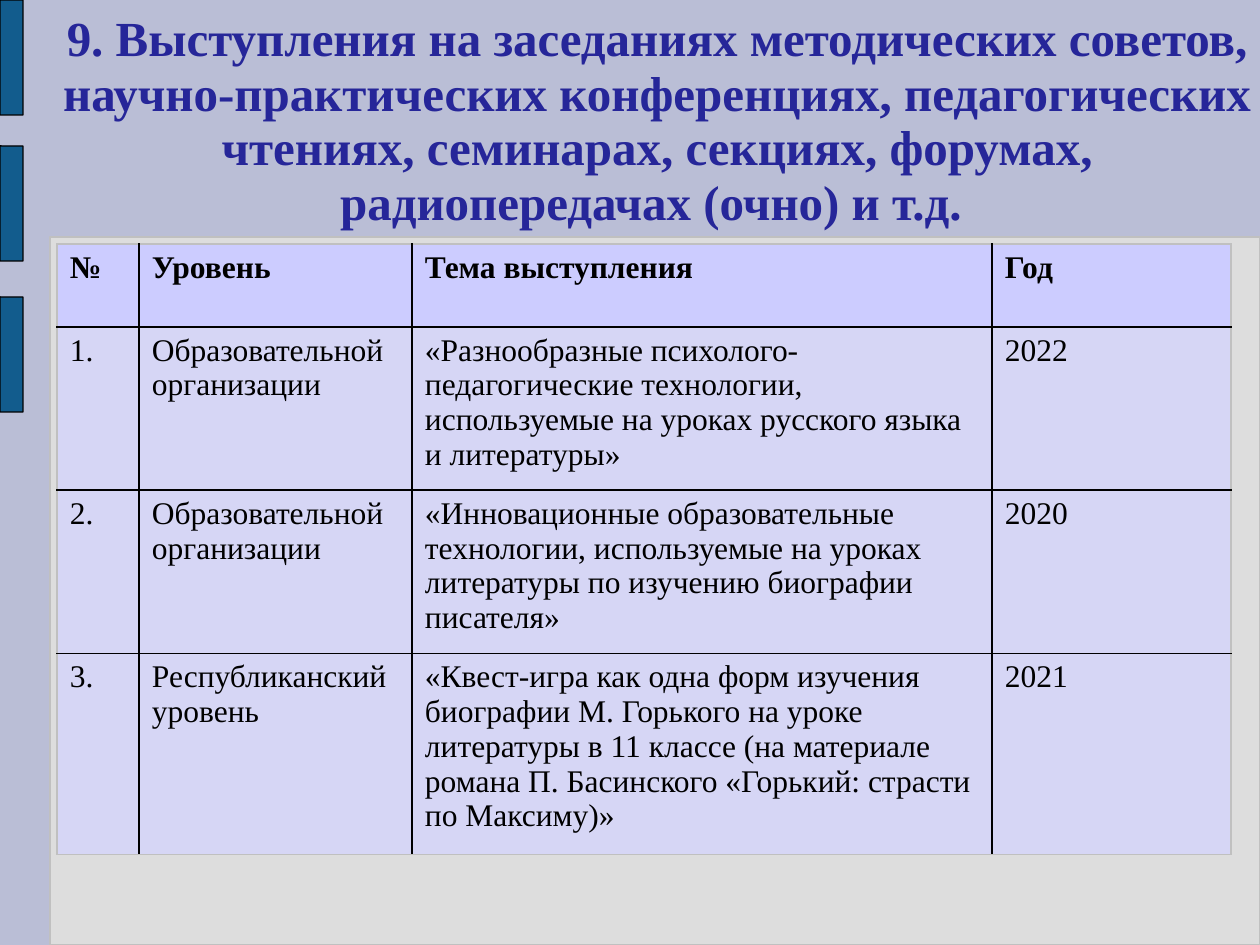
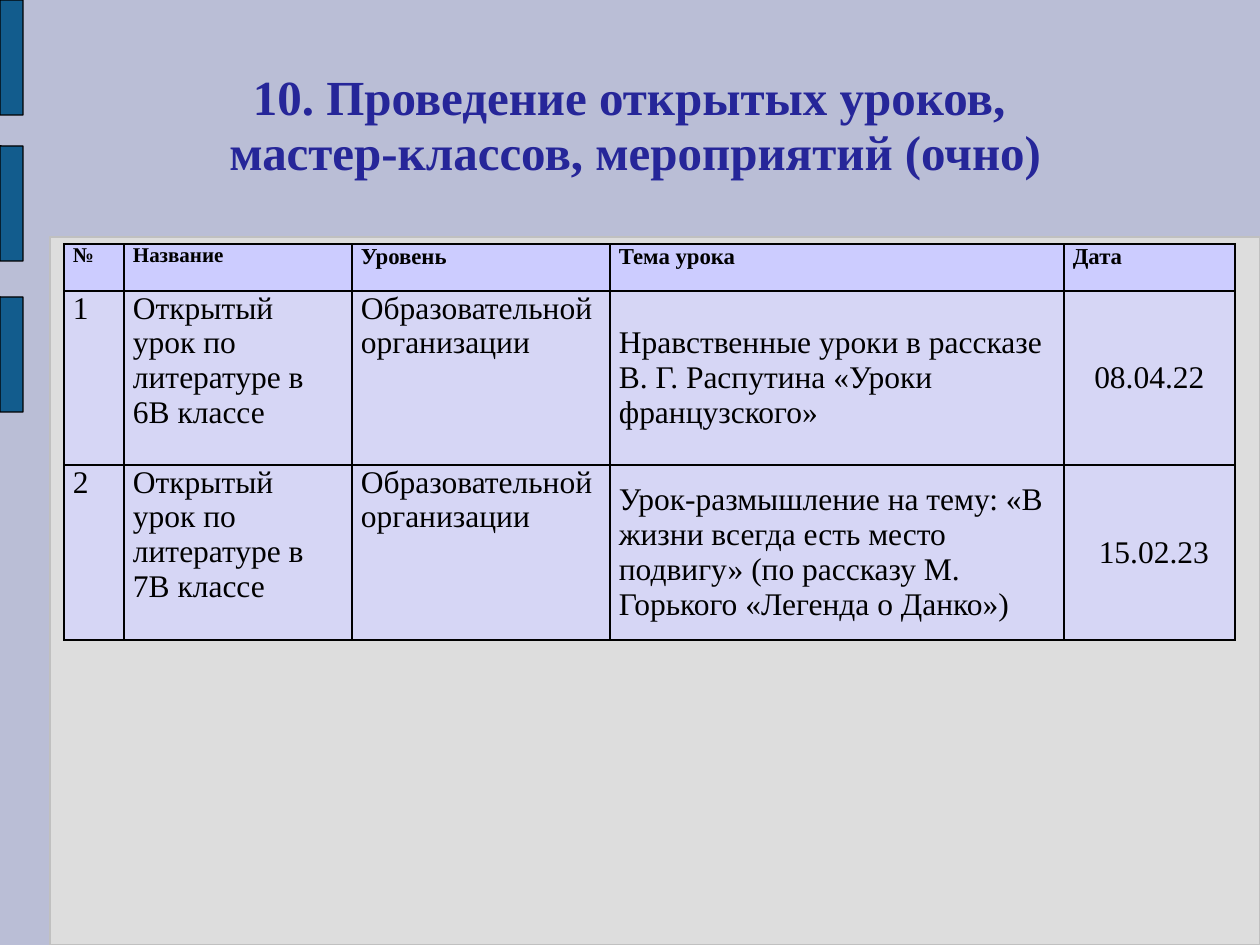
from lxml.etree import SubElement
from pptx import Presentation
from pptx.dml.color import RGBColor
from pptx.enum.shapes import MSO_SHAPE
from pptx.enum.text import MSO_ANCHOR, PP_ALIGN
from pptx.oxml.ns import qn
from pptx.util import Pt

PX = 7257.14  # EMU per pixel, 126 pixels to the inch
FONT = "Times New Roman"
BACKGROUND = RGBColor(0xBA, 0xBE, 0xD6)
PANEL = RGBColor(0xDD, 0xDD, 0xDD)
SILVER = RGBColor(0xC0, 0xC0, 0xC0)
BAR = RGBColor(0x12, 0x5C, 0x8D)
BLACK = RGBColor(0, 0, 0)
TITLE = RGBColor(0x26, 0x26, 0x99)
HEADER_FILL = RGBColor(0xCC, 0xCC, 0xFF)
BODY_FILL = RGBColor(0xD6, 0xD6, 0xF5)

BAR_TOPS = (0, 146, 297)

SPEECHES = [
    ["№", "Уровень", "Тема выступления", "Год"],
    ["1.", "Образовательной организации",
     "«Разнообразные психолого-педагогические технологии, используемые на "
     "уроках русского языка и литературы»", "2022"],
    ["2.", "Образовательной организации",
     "«Инновационные образовательные технологии, используемые на уроках "
     "литературы по изучению биографии писателя»", "2020"],
    ["3.", "Республиканский уровень",
     "«Квест-игра как одна форм изучения биографии М. Горького на уроке "
     "литературы в 11 классе (на материале романа П. Басинского «Горький: "
     "страсти по Максиму)»", "2021"],
]
LESSONS = [
    ["№", "Название", "Уровень", "Тема урока", "Дата"],
    ["1", "Открытый урок по литературе в 6В классе",
     "Образовательной организации",
     "Нравственные уроки в рассказе В. Г. Распутина «Уроки французского»",
     "08.04.22"],
    ["2", "Открытый урок по литературе в 7В классе",
     "Образовательной организации",
     "Урок-размышление на тему: «В жизни всегда есть место подвигу» "
     "(по рассказу М. Горького «Легенда о Данко»)", "15.02.23"],
]


def px(*lengths):
    return [round(length * PX) for length in lengths]


def write(frame, text, size=18, color=BLACK, bold=False, align=PP_ALIGN.LEFT,
          spacing=None):
    """Put text in a frame; a vertical tab marks a line break."""
    paragraph = frame.paragraphs[0]
    paragraph.text = text
    paragraph.alignment = align
    if spacing:
        paragraph.line_spacing = spacing
    for run in paragraph.runs:
        font = run.font
        font.name, font.size, font.bold = FONT, Pt(size), bold
        font.color.rgb = color


def add_block(slide, box, fill, line, corner):
    block = slide.shapes.add_shape(MSO_SHAPE.ROUNDED_RECTANGLE, *px(*box))
    block.adjustments[0] = corner
    block.shadow.inherit = False
    block.fill.solid()
    block.fill.fore_color.rgb = fill
    block.line.color.rgb = line
    block.line.width = Pt(0.75)


def add_title(slide, text, box):
    frame = slide.shapes.add_textbox(*px(*box)).text_frame
    frame.word_wrap = True
    frame.vertical_anchor = MSO_ANCHOR.MIDDLE
    frame.margin_left = frame.margin_right = 0
    frame.margin_top = frame.margin_bottom = 0
    write(frame, text, size=28, color=TITLE, bold=True,
          align=PP_ALIGN.CENTER, spacing=0.93)


def set_borders(cell, colors):
    """Draw the left, right, top and bottom borders, before the fill."""
    properties = cell._tc.get_or_add_tcPr()
    for side, color in zip("LRTB", colors):
        border = SubElement(properties, qn(f"a:ln{side}"), w=str(Pt(1)))
        fill = SubElement(border, qn("a:solidFill"))
        SubElement(fill, qn("a:srgbClr"), val=str(color))


def add_grid(slide, rows, corner, widths, heights, frame_color, margins):
    """Add a table and return it with its header and body filled in."""
    last_row, last_column = len(rows) - 1, len(widths) - 1
    grid = slide.shapes.add_table(
        len(rows), len(widths),
        *px(*corner, sum(widths), sum(heights))).table
    grid.horz_banding = False
    for column, width in zip(grid.columns, px(*widths)):
        column.width = width
    for row, height in zip(grid.rows, px(*heights)):
        row.height = height
    side_margin, end_margin = px(*margins)
    for r, texts in enumerate(rows):
        for c, text in enumerate(texts):
            cell = grid.cell(r, c)
            edges = (c == 0, c == last_column, r == 0, r == last_row)
            set_borders(cell, [frame_color if edge else BLACK
                               for edge in edges])
            cell.fill.solid()
            cell.fill.fore_color.rgb = BODY_FILL if r else HEADER_FILL
            cell.margin_left = cell.margin_right = side_margin
            cell.margin_top = cell.margin_bottom = end_margin
            write(cell.text_frame, text, bold=r == 0)
    return grid


def add_page(deck, title, title_box):
    """Start a slide with the shared background, panel, bars and title."""
    slide = deck.slides.add_slide(deck.slide_layouts[6])
    slide.background.fill.solid()
    slide.background.fill.fore_color.rgb = BACKGROUND
    add_block(slide, (50, 237, 1210, 708), PANEL, SILVER, 0)
    for top in BAR_TOPS:
        add_block(slide, (0, top, 23, 115), BAR, BLACK, 0.01)
    add_title(slide, title, title_box)
    return slide


def add_speeches(deck):
    slide = add_page(
        deck,
        "9. Выступления на заседаниях методических советов, "
        "научно-практических конференциях, педагогических чтениях, "
        "семинарах, секциях, форумах, радиопередачах (очно) и т.д. ",
        (54, 0, 1206, 244))
    add_grid(slide, SPEECHES, (57, 244), (82, 273, 580, 239),
             (83, 152, 152, 187), SILVER, (13, 6))


def add_lessons(deck):
    slide = add_page(
        deck,
        "10. Проведение открытых уроков,\v мастер-классов, мероприятий (очно)",
        (92, 19, 1074, 215))
    grid = add_grid(slide, LESSONS, (64, 244), (60, 228, 258, 454, 171),
                    (47, 174, 175), BLACK, (9, 0))
    # Smaller header text
    for c, size in enumerate((12, 12, 13, 13, 13)):
        write(grid.cell(0, c).text_frame, LESSONS[0][c], size=size, bold=True)
    # Topics and dates stand in the middle of their cells
    for r in (1, 2):
        topic, date = grid.cell(r, 3), grid.cell(r, 4)
        topic.vertical_anchor = date.vertical_anchor = MSO_ANCHOR.MIDDLE
        date.text_frame.paragraphs[0].alignment = PP_ALIGN.CENTER
    last_date = grid.cell(2, 4).text_frame.paragraphs[0]
    last_date._p.get_or_add_pPr().set("marL", str(px(9)[0]))


def main():
    deck = Presentation()
    deck.slide_width, deck.slide_height = px(1260, 945)
    add_speeches(deck)
    add_lessons(deck)
    deck.save("out.pptx")


if __name__ == "__main__":
    main()
